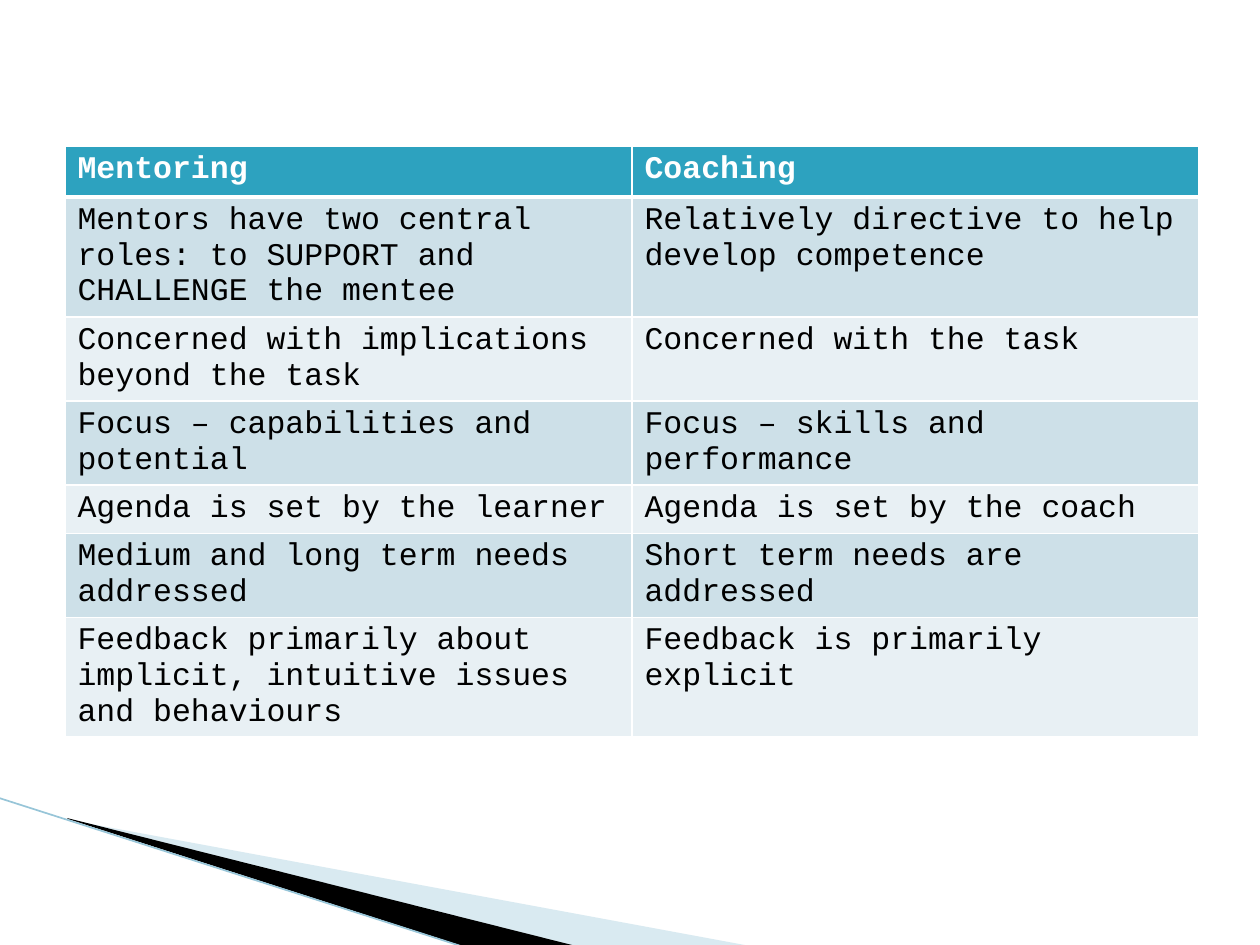
"""Build a slide that compares mentoring and coaching in a table."""
from lxml.etree import SubElement
from pptx import Presentation
from pptx.dml.color import RGBColor
from pptx.enum.shapes import MSO_CONNECTOR as Connector
from pptx.oxml.ns import qn
from pptx.util import Pt

PX = 914400 / 126


def px(length):
    return round(length * PX)


def paint(fill, color, alpha=None):
    fill.solid()
    fill.fore_color.rgb = RGBColor.from_string(color)
    if alpha:
        srgb = fill._xPr.find(qn("a:solidFill"))[0]
        SubElement(srgb, qn("a:alpha"), val=str(alpha * 1000))


prs = Presentation()
prs.slide_width, prs.slide_height = px(1260), px(945)
slide = prs.slides.add_slide(prs.slide_layouts[6])
shapes = slide.shapes

wedges = [
    ([(69, 820), (750, 946), (575, 946), (69, 819)], "A0CBDC", 40),
    ([(67, 818), (576, 946), (469, 948), (68, 819)], "000000", None),
]
for points, color, alpha in wedges:
    builder = shapes.build_freeform(*points[0], scale=PX)
    builder.add_line_segments(points[1:], close=True)
    wedge = builder.convert_to_shape()
    wedge.shadow.inherit = False
    wedge.line.fill.background()
    paint(wedge.fill, color, alpha)

edge = shapes.add_connector(Connector.STRAIGHT, px(-1), px(798), px(467), px(948))
paint(edge.line.fill, "97C5D8")
edge.line.width = Pt(0.95)
SubElement(edge._element.spPr, qn("a:effectLst"))

comparison = [
    ("Mentoring", "Coaching"),
    ("Mentors have two central roles: to SUPPORT and CHALLENGE the mentee",
     "Relatively directive to help develop competence"),
    ("Concerned with implications beyond the task", "Concerned with the task"),
    ("Focus – capabilities and potential", "Focus – skills and performance"),
    ("Agenda is set by the learner", "Agenda is set by the coach"),
    ("Medium and long term needs addressed", "Short term needs are addressed"),
    ("Feedback primarily about implicit, intuitive issues and behaviours",
     "Feedback is primarily explicit"),
]
row_heights = [51, 110, 77, 44, 44, 77, 77]
table = shapes.add_table(
    len(comparison), 2, px(65), px(146), px(1134), px(sum(row_heights))).table
for column in table.columns:
    column.width = px(567)

for r, (texts, height) in enumerate(zip(comparison, row_heights)):
    table.rows[r].height = px(height)
    is_header = r == 0
    band = "2DA2BF" if is_header else ("E8F0F4", "CDE0E8")[r % 2]
    for c, text in enumerate(texts):
        cell = table.cell(r, c)
        cell.text_frame.text = text
        font = cell.text_frame.paragraphs[0].runs[0].font
        font.name, font.size, font.bold = "Courier New", Pt(18), is_header
        paint(font.fill, "FFFFFF" if is_header else "000000")
        props = cell._tc.get_or_add_tcPr()
        for side in ("lnL", "lnR", "lnT", "lnB"):
            thick = (r, side) in ((0, "lnB"), (1, "lnT"))
            border = SubElement(props, qn(f"a:{side}"), w=str(Pt(3 if thick else 1)))
            SubElement(SubElement(border, qn("a:solidFill")), qn("a:srgbClr"), val="FFFFFF")
        paint(cell.fill, band)

prs.save("out.pptx")
